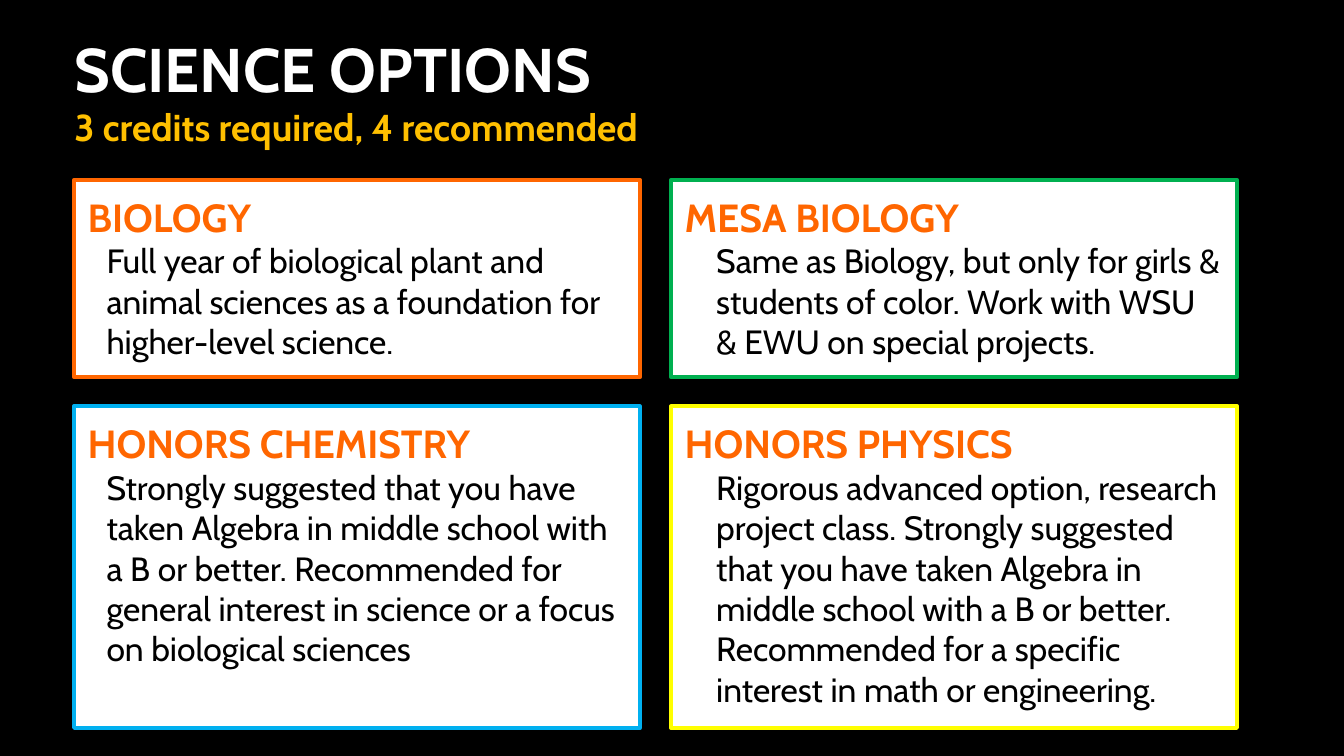
from dataclasses import dataclass

from pptx import Presentation
from pptx.dml.color import RGBColor
from pptx.enum.shapes import MSO_SHAPE
from pptx.enum.text import MSO_ANCHOR, PP_ALIGN
from pptx.util import Pt

RECTANGLE = MSO_SHAPE.RECTANGLE
TOP, MIDDLE = MSO_ANCHOR.TOP, MSO_ANCHOR.MIDDLE
LEFT = PP_ALIGN.LEFT


@dataclass(frozen=True)
class Theme:
    font: str = "Cabin"
    black: str = "000000"
    white: str = "FFFFFF"
    gold: str = "FFC000"
    orange: str = "FF6600"
    green: str = "00B050"
    blue: str = "00B0F0"
    yellow: str = "FFFF00"
    title: float = 44
    subtitle: float = 26.7
    heading: float = 28
    body: float = 24
    border: float = 3
    inset: float = 9.6


THEME = Theme()
COLUMNS = (53, 479.5)
ROWS = (128.5, 290.2)
CARD_WIDTH = 404
CARD_HEIGHTS = (141, 229.7)
BODY_INDENTS = (13.5, 22.5)

CARDS = [
    [
        ("BIOLOGY", THEME.orange,
         "Full year of biological plant and animal sciences as a foundation "
         "for higher-level science."),
        ("MESA BIOLOGY", THEME.green,
         "Same as Biology, but only for girls & students of color. "
         "Work with WSU & EWU on special projects."),
    ],
    [
        ("HONORS CHEMISTRY", THEME.blue,
         "Strongly suggested that you have taken Algebra in middle school "
         "with a B or better. Recommended for general interest in science "
         "or a focus on biological sciences"),
        ("HONORS PHYSICS", THEME.yellow,
         "Rigorous advanced option, research project class. Strongly "
         "suggested that you have taken Algebra in middle school with a B "
         "or better. Recommended for a specific interest in math or "
         "engineering."),
    ],
]


def rgb(color):
    return RGBColor.from_string(color)


def set_frame(tf, anchor):
    tf.word_wrap = True
    tf.vertical_anchor = anchor
    tf.margin_left = tf.margin_right = Pt(THEME.inset)
    tf.margin_top = tf.margin_bottom = Pt(THEME.inset)


def add_run(p, text, size, color, bold=False):
    r = p.add_run()
    r.text = text
    r.font.name = THEME.font
    r.font.size = Pt(size)
    r.font.bold = bold
    r.font.color.rgb = rgb(color)


def add_title(s, title, subtitle):
    tf = s.shapes.add_textbox(Pt(43.5), Pt(34), Pt(811), Pt(60.5)).text_frame
    set_frame(tf, MIDDLE)
    p = tf.paragraphs[0]
    add_run(p, title, THEME.title, THEME.white, bold=True)
    p.add_line_break()
    add_run(p, subtitle, THEME.subtitle, THEME.gold, bold=True)


def add_card(s, x, y, height, indent, card):
    heading, border, body = card
    sp = s.shapes.add_shape(RECTANGLE, Pt(x), Pt(y), Pt(CARD_WIDTH), Pt(height))
    sp.shadow.inherit = False
    sp.fill.solid()
    sp.fill.fore_color.rgb = rgb(THEME.white)
    sp.line.color.rgb = rgb(border)
    sp.line.width = Pt(THEME.border)
    tf = sp.text_frame
    set_frame(tf, TOP)
    p = tf.paragraphs[0]
    p.alignment = LEFT
    add_run(p, heading, THEME.heading, THEME.orange, bold=True)
    p = tf.add_paragraph()
    p.alignment = LEFT
    pPr = p._p.get_or_add_pPr()
    pPr.set("marL", str(Pt(indent)))
    pPr.set("indent", "0")
    add_run(p, body, THEME.body, THEME.black)


def main():
    prs = Presentation()
    prs.slide_width, prs.slide_height = Pt(960), Pt(540)
    s = prs.slides.add_slide(prs.slide_layouts[6])
    s.background.fill.solid()
    s.background.fill.fore_color.rgb = rgb(THEME.black)
    add_title(s, "SCIENCE OPTIONS", "3 credits required, 4 recommended")
    for y, height, row in zip(ROWS, CARD_HEIGHTS, CARDS):
        for x, indent, card in zip(COLUMNS, BODY_INDENTS, row):
            add_card(s, x, y, height, indent, card)
    prs.save("out.pptx")


if __name__ == "__main__":
    main()
